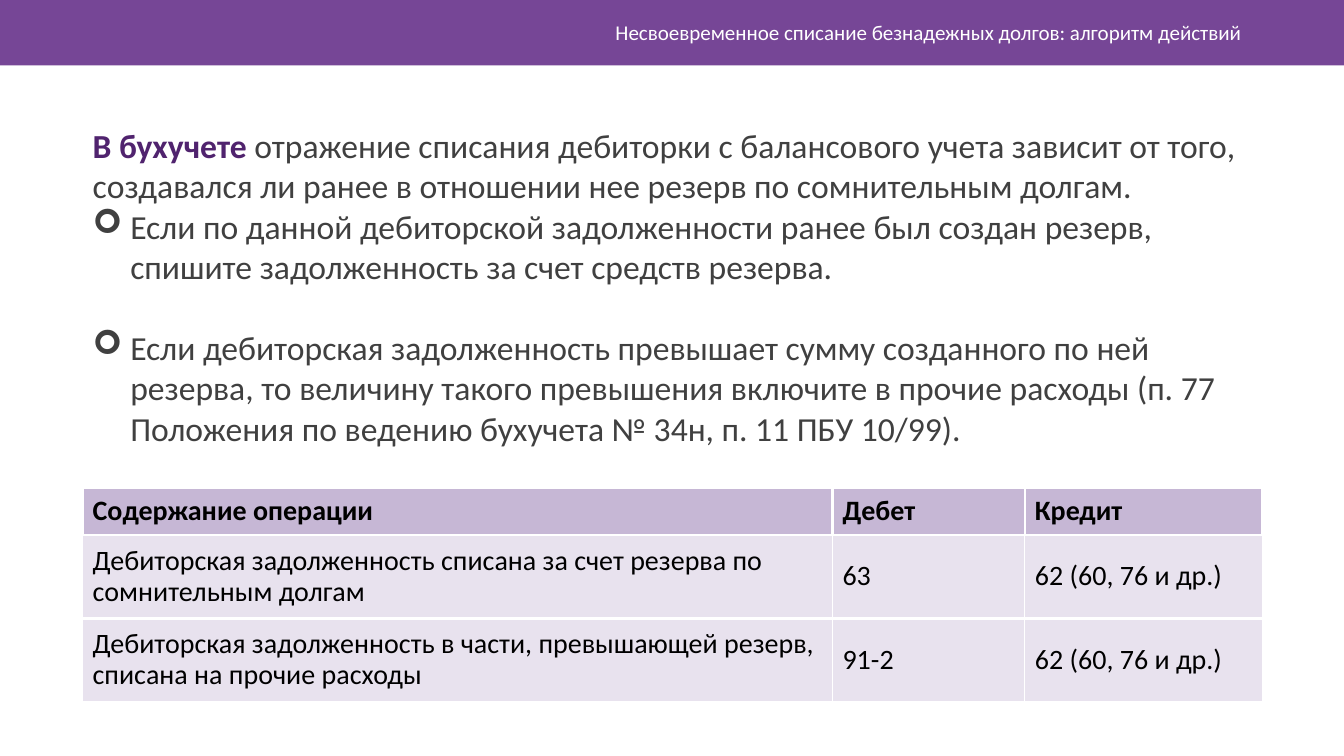
from lxml import etree
from pptx import Presentation
from pptx import util as u
from pptx.dml.color import RGBColor
from pptx.enum import shapes, text
from pptx.oxml import ns

PURPLE = RGBColor(0x76, 0x46, 0x96)
DARK_PURPLE = RGBColor(0x50, 0x23, 0x6E)
HEADER_LILAC = RGBColor(0xC6, 0xB7, 0xD5)
ROW_LILAC = RGBColor(0xE8, 0xE2, 0xEE)
GREY = RGBColor(0x40, 0x40, 0x40)
BLACK = RGBColor(0, 0, 0)
WHITE = RGBColor(0xFF, 0xFF, 0xFF)
FONT = "Calibri"

TITLE = "Несвоевременное списание безнадежных долгов: алгоритм действий"
LEAD = "В бухучете "
INTRO = ("отражение списания дебиторки с балансового учета зависит от того, "
         "создавался ли ранее в отношении нее резерв по сомнительным долгам.")
RULES = [
    "Если по данной дебиторской задолженности ранее был создан резерв, "
    "спишите задолженность за счет средств резерва.",
    "Если дебиторская задолженность превышает сумму созданного по ней резерва, "
    "то величину такого превышения включите в прочие расходы "
    "(п. 77 Положения по ведению бухучета № 34н, п. 11 ПБУ 10/99).",
]
ENTRIES = [
    ("Содержание операции", "Дебет", "Кредит"),
    ("Дебиторская задолженность списана за счет резерва по сомнительным долгам",
     "63", "62 (60, 76 и др.)"),
    ("Дебиторская задолженность в части, превышающей резерв, списана на прочие расходы",
     "91-2", "62 (60, 76 и др.)"),
]


def place(shape, left, top, width, height):
    shape.left, shape.top, shape.width, shape.height = left, top, width, height


def style_font(font, size, color, bold=False):
    font.name = FONT
    font.size = u.Pt(size)
    font.bold = bold
    font.color.rgb = color


def set_bullet(paragraph, indent, character=None):
    properties = paragraph._p.get_or_add_pPr()
    properties.set("marL", str(indent))
    properties.set("indent", str(-indent))
    if character:
        etree.SubElement(properties, ns.qn("a:buFont")).set("typeface", "Wingdings")
        etree.SubElement(properties, ns.qn("a:buChar")).set("char", character)
    else:
        etree.SubElement(properties, ns.qn("a:buNone"))


def set_borders(cell, widths):
    properties = cell._tc.get_or_add_tcPr()
    for position, (side, width) in enumerate(widths.items()):
        line = etree.Element(ns.qn(f"a:ln{side}"), w=str(u.Pt(width)))
        fill = etree.SubElement(line, ns.qn("a:solidFill"))
        etree.SubElement(fill, ns.qn("a:srgbClr")).set("val", str(WHITE))
        properties.insert(position, line)


def add_header(slide, left, top, width, height):
    band = slide.shapes.add_shape(shapes.MSO_SHAPE.RECTANGLE, left, top, width, height)
    band.shadow.inherit = False
    band.fill.solid()
    band.fill.fore_color.rgb = PURPLE
    band.line.fill.background()
    band.element.getparent().insert(2, band.element)

    title = slide.shapes.title
    place(title, left + u.Cm(9), top + u.Cm(0.3), width - u.Cm(11.32), u.Cm(1.02))
    frame = title.text_frame
    frame.text = TITLE
    frame.auto_size = text.MSO_AUTO_SIZE.NONE
    frame.vertical_anchor = text.MSO_ANCHOR.MIDDLE
    paragraph = frame.paragraphs[0]
    paragraph.alignment = text.PP_ALIGN.RIGHT
    style_font(paragraph.font, 15, WHITE)


def add_explanation(slide, left, top, width, height):
    body = slide.placeholders[1]
    place(body, left, top, width, height)
    frame = body.text_frame
    frame.auto_size = text.MSO_AUTO_SIZE.NONE
    frame.vertical_anchor = text.MSO_ANCHOR.TOP

    intro = frame.paragraphs[0]
    intro.space_before = u.Pt(0)
    set_bullet(intro, 0)
    for wording, color, bold in ((LEAD, DARK_PURPLE, True), (INTRO, GREY, False)):
        run = intro.add_run()
        run.text = wording
        style_font(run.font, 24, color, bold)

    for gap, rule in zip((0, 29), RULES):
        paragraph = frame.add_paragraph()
        paragraph.text = rule
        paragraph.space_before = u.Pt(gap)
        set_bullet(paragraph, u.Cm(0.95), "➢")
        style_font(paragraph.font, 24, GREY)


def add_entries(slide, left, top, width, height):
    header_height = u.Cm(1.19)
    row_height = (height - header_height) // (len(ENTRIES) - 1)
    column_widths = (u.Cm(18.9), u.Cm(4.85), width - u.Cm(23.75))
    table = slide.shapes.add_table(
        len(ENTRIES), len(column_widths), left, top, width, height).table
    for column, column_width in zip(table.columns, column_widths):
        column.width = column_width

    for row_index, entry in enumerate(ENTRIES):
        is_header = row_index == 0
        is_last = row_index == len(ENTRIES) - 1
        table.rows[row_index].height = header_height if is_header else row_height
        side_width = 2.25 if is_header else 1
        for column_index, wording in enumerate(entry):
            cell = table.cell(row_index, column_index)
            cell.text = wording
            cell.vertical_anchor = text.MSO_ANCHOR.MIDDLE
            cell.fill.solid()
            cell.fill.fore_color.rgb = HEADER_LILAC if is_header else ROW_LILAC
            set_borders(cell, {"L": side_width, "R": side_width,
                               "T": 2.25, "B": 1 if is_last else 2.25})
            paragraph = cell.text_frame.paragraphs[0]
            paragraph.line_spacing = 0.9
            style_font(paragraph.font, 20, BLACK, is_header)


def main():
    presentation = Presentation()
    presentation.slide_width = u.Cm(33.87)
    presentation.slide_height = u.Cm(19.05)
    slide = presentation.slides.add_slide(presentation.slide_layouts[1])
    left, width = u.Cm(2.08), u.Cm(29.74)
    add_header(slide, 0, 0, presentation.slide_width, u.Cm(1.65))
    add_explanation(slide, left, u.Cm(3.02), width, u.Cm(8.46))
    add_entries(slide, left, u.Cm(12.29), width, u.Cm(5.39))
    presentation.save("out.pptx")


if __name__ == "__main__":
    main()
